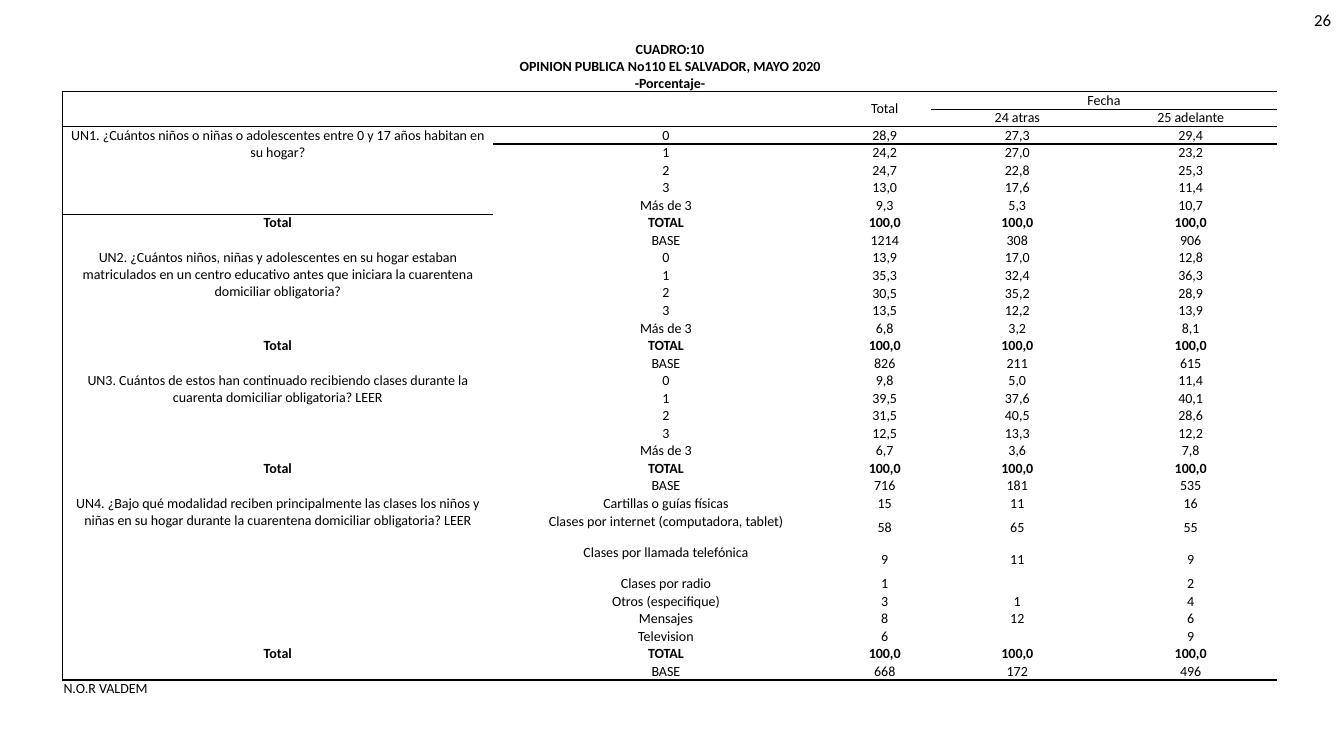
from collections import defaultdict

from lxml import etree
from pptx import Presentation
from pptx.dml.color import RGBColor
from pptx.enum.text import MSO_ANCHOR, PP_ALIGN
from pptx.oxml.ns import qn
from pptx.util import Inches, Pt

TOP, MIDDLE = MSO_ANCHOR.TOP, MSO_ANCHOR.MIDDLE
LEFT, CENTER, RIGHT = PP_ALIGN.LEFT, PP_ALIGN.CENTER, PP_ALIGN.RIGHT
BLACK = RGBColor(0x00, 0x00, 0x00)
NO_STYLE = "{2D5ABB26-0587-4C30-8999-92F81FD0307C}"

COLUMN_WIDTHS = [4.27, 3.43, 0.91, 1.72, 1.72]
LINE_HEIGHT = Pt(12.55)
TALL_ROWS = {"Clases por internet (computadora, tablet)", "Clases por llamada telefónica"}
FIRST_ROW = 3

# Each block: question, answers, then one line of values per answer and the base
COUNTS = ["0", "1", "2", "3", "Más de 3"]
BLOCKS = [
    ("UN1. ¿Cuántos niños o niñas o adolescentes entre 0 y 17 años habitan en su hogar?",
     COUNTS,
     [("28,9", "27,3", "29,4"), ("24,2", "27,0", "23,2"), ("24,7", "22,8", "25,3"),
      ("13,0", "17,6", "11,4"), ("9,3", "5,3", "10,7")],
     ("1214", "308", "906")),
    ("UN2. ¿Cuántos niños, niñas y adolescentes en su hogar estaban matriculados en un "
     "centro educativo antes que iniciara la cuarentena domiciliar obligatoria?",
     COUNTS,
     [("13,9", "17,0", "12,8"), ("35,3", "32,4", "36,3"), ("30,5", "35,2", "28,9"),
      ("13,5", "12,2", "13,9"), ("6,8", "3,2", "8,1")],
     ("826", "211", "615")),
    ("UN3. Cuántos de estos han continuado recibiendo clases durante la cuarenta "
     "domiciliar obligatoria? LEER",
     COUNTS,
     [("9,8", "5,0", "11,4"), ("39,5", "37,6", "40,1"), ("31,5", "40,5", "28,6"),
      ("12,5", "13,3", "12,2"), ("6,7", "3,6", "7,8")],
     ("716", "181", "535")),
    ("UN4. ¿Bajo qué modalidad reciben principalmente las clases los niños y niñas en su "
     "hogar durante la cuarentena domiciliar obligatoria? LEER",
     ["Cartillas o guías físicas", "Clases por internet (computadora, tablet)",
      "Clases por llamada telefónica", "Clases por radio", "Otros (especifique)",
      "Mensajes", "Television"],
     [("15", "11", "16"), ("58", "65", "55"), ("9", "11", "9"), ("1", "", "2"),
      ("3", "1", "4"), ("8", "12", "6"), ("6", "", "9")],
     ("668", "172", "496")),
]


class Page:
    """Style and current slide."""

    font = {"name": "Calibri", "size": Pt(10), "bold": False}

    def __init__(self, deck):
        self.slide = deck.slides.add_slide(deck.slide_layouts[6])

    def fill_text(self, frame, text, align, **changes):
        frame.text = text
        frame.word_wrap = True
        for para in frame.paragraphs:
            para.alignment = align
            for span in para.runs:
                for name, value in {**self.font, **changes}.items():
                    setattr(span.font, name, value)
                span.font.color.rgb = BLACK

    def text(self, left, top, width, height, text, align, **changes):
        box = self.slide.shapes.add_textbox(
            Inches(left), Inches(top), Inches(width), Inches(height))
        box.text_frame.vertical_anchor = MIDDLE
        self.fill_text(box.text_frame, text, align, **changes)

    def table(self, left, top, widths, heights):
        frame = self.slide.shapes.add_table(
            len(heights), len(widths), Inches(left), Inches(top),
            Inches(sum(widths)), sum(heights))
        for style in frame.element.iter(qn("a:tableStyleId")):
            style.text = NO_STYLE
        table = frame.table
        table.first_row = table.horz_banding = False
        for column, width in zip(table.columns, widths):
            column.width = Inches(width)
        for row, height in zip(table.rows, heights):
            row.height = height
        return table

    def cell(self, cell, text, anchor, align, bold):
        form = {"margin_left": Inches(0.01), "margin_right": Inches(0.01),
                "margin_top": Pt(0.36), "margin_bottom": 0, "vertical_anchor": anchor}
        for name, value in form.items():
            setattr(cell, name, value)
        if text:
            self.fill_text(cell.text_frame, text, align, bold=bold)
        # Line breaks and empty cells take the table's text size as well
        size = str(self.font["size"].centipoints)
        for line_break in cell._tc.iter(qn("a:br")):
            etree.SubElement(line_break, qn("a:rPr"), sz=size)
        if not text:
            for para in cell._tc.iter(qn("a:p")):
                etree.SubElement(para, qn("a:endParaRPr"), sz=size)

    def borders(self, cell, widths):
        properties = cell._tc.get_or_add_tcPr()
        for side in ("lnL", "lnT", "lnB"):
            if side in widths:
                line = etree.SubElement(properties, qn("a:" + side), w=str(Pt(widths[side])))
                fill = etree.SubElement(line, qn("a:solidFill"))
                etree.SubElement(fill, qn("a:srgbClr"), val=str(BLACK))
        cell.fill.background()


def survey_rows():
    """Return the table's rows of text and the merged areas."""
    rows = [
        ["CUADRO:10\vOPINION PUBLICA No110 EL SALVADOR, MAYO 2020\n-Porcentaje-", "", "", "", ""],
        ["", "", "Total", "Fecha", ""],
        ["", "", "", "24 atras", "25 adelante"],
    ]
    merges = [(0, 0, 0, 4), (1, 0, 2, 1), (1, 2, 2, 2), (1, 3, 1, 4)]
    for question, answers, values, base in BLOCKS:
        start = len(rows)
        rows += [["", answer, *line] for answer, line in zip(answers, values)]
        rows[start][0] = question
        total = len(rows)
        rows += [["Total", "TOTAL"] + ["100,0"] * 3, ["", "BASE", *base]]
        merges += [(start, 0, total - 1, 0), (total, 0, total + 1, 0)]
    merges.append((len(rows), 0, len(rows), 4))
    rows.append(["N.O.R VALDEM", "", "", "", ""])
    return rows, merges


def survey_borders(last):
    """Return line widths by cell and side."""
    borders = defaultdict(dict)
    for row, first_column, width in [(1, 0, 1), (2, 3, 0.5), (FIRST_ROW, 0, 1), (last, 0, 1)]:
        for column in range(first_column, len(COLUMN_WIDTHS)):
            borders[row, column]["lnT"] = width
            borders[row - 1, column]["lnB"] = width
    for row in range(1, last):
        borders[row, 0]["lnL"] = 1
    return borders


def main():
    deck = Presentation()
    deck.slide_width, deck.slide_height = Inches(13.33), Inches(7.5)
    page = Page(deck)

    # Page number
    page.text(10.3, 0, 3, 0.4, "26", RIGHT, size=Pt(12))

    # Survey table
    rows, merges = survey_rows()
    last = len(rows) - 1
    heights = [Inches(0.31) if row[1] in TALL_ROWS else LINE_HEIGHT for row in rows]
    heights[0] = heights[last] = Inches(0.5)
    table = page.table(0.62, 0.4, COLUMN_WIDTHS, heights)
    for top, left, bottom, right in merges:
        table.cell(top, left).merge(table.cell(bottom, right))

    borders = survey_borders(last)
    for row, texts in enumerate(rows):
        for column, text in enumerate(texts):
            cell = table.cell(row, column)
            page.cell(cell, text,
                      anchor=TOP if row >= FIRST_ROW and column < 2 or row == last else MIDDLE,
                      align=LEFT if row == last else CENTER,
                      bold=row == 0 or texts[1] == "TOTAL")
            page.borders(cell, borders[row, column])

    deck.save("out.pptx")


if __name__ == "__main__":
    main()
